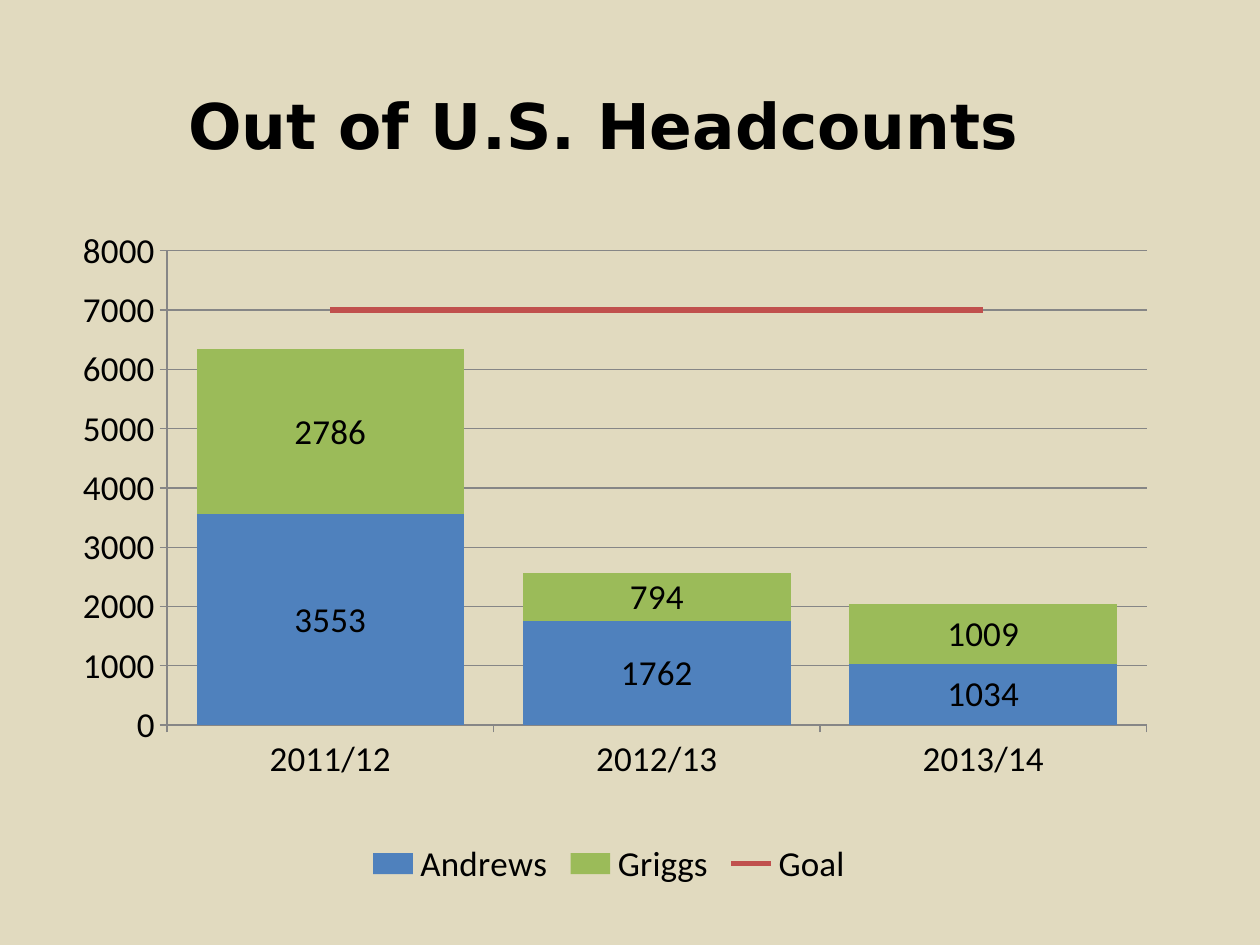
from copy import deepcopy

from pptx import Presentation
from pptx.chart.data import CategoryChartData
from pptx.dml.color import RGBColor
from pptx.enum.chart import XL_CHART_TYPE as ChartType
from pptx.enum.chart import XL_LABEL_POSITION as LabelPosition
from pptx.enum.chart import XL_LEGEND_POSITION as LegendPosition
from pptx.enum.chart import XL_MARKER_STYLE as MarkerStyle
from pptx.enum.chart import XL_TICK_MARK as TickMark
from pptx.enum.text import MSO_ANCHOR as Anchor
from pptx.enum.text import PP_ALIGN as Align
from pptx.oxml import parse_xml
from pptx.oxml.ns import nsdecls
from pptx.util import Pt

YEARS = ["2011/12", "2012/13", "2013/14"]
HEADCOUNTS = {
    "Andrews": [3553, 1762, 1034],
    "Griggs": [2786, 794, 1009],
    "Goal": [7000, 7000, 7000],
}
BAR_COLORS = ["4F81BD", "9BBB59"]
GOAL_COLOR = "C0504D"
GRID_COLOR = "868686"
BLACK = "000000"


def paint(color_format, color):
    """Set a colour format to a hex colour."""
    color_format.rgb = RGBColor.from_string(color)


def fill_solid(fill, color):
    """Give a fill one solid colour."""
    fill.solid()
    paint(fill.fore_color, color)


def style_line(line, color, width):
    """Give a line its colour and width in points."""
    fill_solid(line.fill, color)
    line.width = Pt(width)


def style_font(font, name, size, bold=False):
    """Set a black font with a name, size and weight."""
    font.name = name
    font.size = Pt(size)
    font.bold = bold
    paint(font.color, BLACK)


def add_title(slide, text, left, top, width, height):
    """Add the centred, bottom-anchored heading."""
    shape = slide.shapes.add_textbox(Pt(left), Pt(top), Pt(width), Pt(height))
    frame = shape.text_frame
    frame.word_wrap = True
    frame.vertical_anchor = Anchor.BOTTOM
    paragraph = frame.paragraphs[0]
    paragraph.alignment = Align.CENTER
    run = paragraph.add_run()
    run.text = text
    style_font(run.font, "DejaVu Sans", 36, bold=True)


def move_last_series_to_line(chart):
    """Turn the last bar series into a line on the same axes."""
    bar_chart = chart.element.xpath(".//c:barChart")[0]
    series = bar_chart.xpath("./c:ser")[-1]
    for flag in series.xpath("./c:invertIfNegative"):
        series.remove(flag)
    line_chart = parse_xml(
        f'<c:lineChart {nsdecls("c")}><c:grouping val="standard"/>'
        '<c:varyColors val="0"/></c:lineChart>'
    )
    line_chart.append(series)
    line_chart.append(parse_xml(f'<c:marker {nsdecls("c")} val="1"/>'))
    for axis_id in bar_chart.xpath("./c:axId"):
        line_chart.append(deepcopy(axis_id))
    bar_chart.addnext(line_chart)


def place_plot(chart, **fractions):
    """Fix the inner plot area as fractions of the chart."""
    plot_area = chart.element.xpath(".//c:plotArea")[0]
    for layout in plot_area.xpath("./c:layout"):
        plot_area.remove(layout)
    sizes = "".join(f'<c:{key} val="{value}"/>' for key, value in fractions.items())
    plot_area.insert(0, parse_xml(
        f'<c:layout {nsdecls("c")}><c:manualLayout><c:layoutTarget val="inner"/>'
        f'<c:xMode val="edge"/><c:yMode val="edge"/>{sizes}'
        '</c:manualLayout></c:layout>'
    ))


def style_bars(plot):
    """Colour the stacked bars and show their values."""
    plot.gap_width = 22
    plot.overlap = 100
    plot.vary_by_categories = False
    for series, color in zip(plot.series, BAR_COLORS):
        fill_solid(series.format.fill, color)
        labels = series.data_labels
        labels.show_value = True
        labels.position = LabelPosition.CENTER
        style_font(labels.font, "Calibri", 20)


def style_goal(series):
    """Draw the goal as a straight line without markers."""
    style_line(series.format.line, GOAL_COLOR, 3)
    series.marker.style = MarkerStyle.NONE
    series.smooth = False


def style_axes(chart):
    """Set the ticks, scale and gridlines."""
    for axis in (chart.category_axis, chart.value_axis):
        axis.major_tick_mark = TickMark.OUTSIDE
        axis.minor_tick_mark = TickMark.NONE
        style_line(axis.format.line, GRID_COLOR, 0.75)
    value_axis = chart.value_axis
    value_axis.minimum_scale = 0
    value_axis.maximum_scale = 8000
    value_axis.major_unit = 1000
    value_axis.has_major_gridlines = True
    style_line(value_axis.major_gridlines.format.line, GRID_COLOR, 0.75)


def add_headcount_chart(slide, left, top, width, height):
    """Add the stacked headcounts with the goal line."""
    data = CategoryChartData()
    data.categories = YEARS
    for name, values in HEADCOUNTS.items():
        data.add_series(name, values)
    chart = slide.shapes.add_chart(
        ChartType.COLUMN_STACKED, Pt(left), Pt(top), Pt(width), Pt(height), data
    ).chart
    chart.has_title = False
    style_font(chart.font, "Calibri", 20)
    move_last_series_to_line(chart)
    bars, goal = chart.plots
    style_bars(bars)
    style_goal(goal.series[0])
    style_axes(chart)
    chart.has_legend = True
    chart.legend.position = LegendPosition.BOTTOM
    chart.legend.include_in_layout = False
    place_plot(chart, x=0.103, y=0.045, w=0.88, h=0.706)


def main():
    """Build the headcount slide and save it."""
    presentation = Presentation()
    presentation.slide_width = Pt(720)
    presentation.slide_height = Pt(540)
    slide = presentation.slides.add_slide(presentation.slide_layouts[6])
    fill_solid(slide.background.fill, "E1DABF")
    add_title(slide, "Out of U.S. Headcounts ", 12, 36, 678, 60)
    add_headcount_chart(slide, 30, 126, 636, 384)
    presentation.save("out.pptx")


if __name__ == "__main__":
    main()
